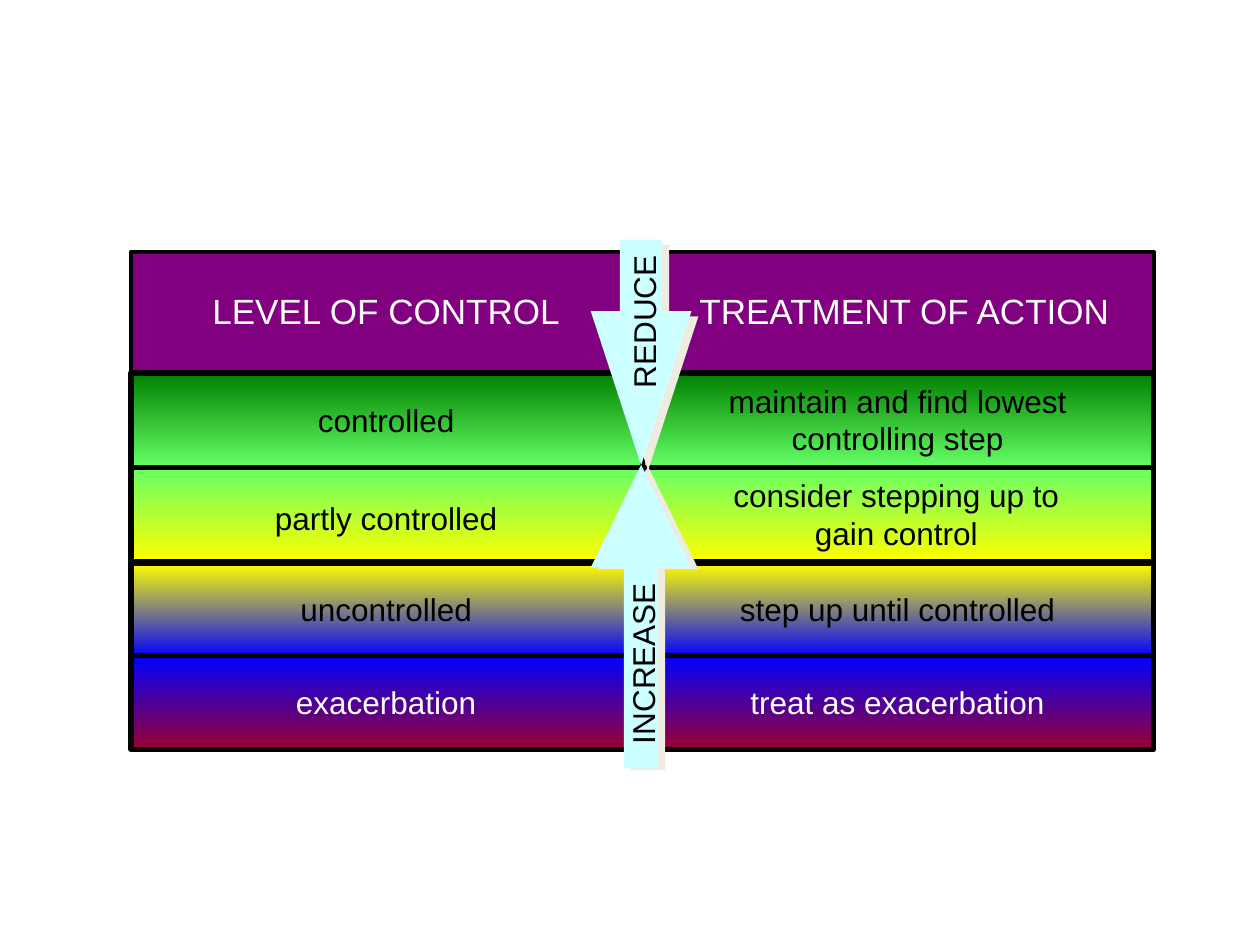
"""Build the slide pairing each level of control with its treatment action."""
from lxml import etree
from pptx import Presentation
from pptx import util as u
from pptx.dml.color import RGBColor
from pptx.enum import shapes, text
from pptx.oxml.ns import qn

COLORS = {
    "black": "000000", "white": "FFFFFF", "purple": "800080",
    "green": "008000", "lime": "66FF66", "yellow": "FFFF00",
    "blue": "0000FF", "crimson": "990033", "ice": "CCFFFF", "shade": "EEECE1",
}


def rgb(name):
    return RGBColor.from_string(COLORS[name])


def add_text(group, words, box, size=18, color="black",
             align=text.PP_ALIGN.CENTER, wrap=True, rotation=0):
    sp = group.shapes.add_textbox(*map(u.Cm, box))
    sp.rotation = rotation
    tf = sp.text_frame
    tf.word_wrap = wrap
    tf.auto_size = text.MSO_AUTO_SIZE.SHAPE_TO_FIT_TEXT
    p = tf.paragraphs[0]
    p.alignment = align
    r = p.add_run()
    r.text = words
    r.font.name = "Arial"
    r.font.size = u.Pt(size)
    r.font.color.rgb = rgb(color)


prs = Presentation()
prs.slide_width, prs.slide_height = u.Cm(25.4), u.Cm(19.05)
s = prs.slides.add_slide(prs.slide_layouts[6])

COL_W = 10.31
ROWS = [
    (5.08, 2.44, ["purple"], 2.25),
    (7.52, 1.9, ["green", "lime"], 3),
    (9.42, 1.9, ["lime", "yellow"], 3),
    (11.35, 1.9, ["yellow", "blue"], 3),
    (13.21, 1.9, ["blue", "crimson"], 3),
]
COLUMNS = [
    (2.64, [
        ("LEVEL OF CONTROL", (2.64, 5.72, 10.29, 1.09), 20, "white"),
        ("controlled", (2.64, 7.95, 10.29, 1.02), 18, "black"),
        ("partly controlled", (2.64, 9.93, 10.29, 1.02), 18, "black"),
        ("uncontrolled", (2.64, 11.76, 10.29, 1.02), 18, "black"),
        ("exacerbation", (2.64, 13.64, 10.29, 1.02), 18, "white"),
    ]),
    (12.95, [
        ("TREATMENT OF ACTION", (13, 5.72, 10.46, 1.09), 20, "white"),
        ("maintain and find lowest controlling step",
         (12.95, 7.57, 10.29, 1.78), 18, "black"),
        ("consider stepping up to gain control",
         (14.12, 9.47, 7.9, 1.78), 18, "black"),
        ("step up until controlled", (12.95, 11.76, 10.29, 1.02), 18, "black"),
        ("treat as exacerbation", (12.95, 13.64, 10.29, 1.02), 18, "white"),
    ]),
]
for left, labels in COLUMNS:
    group = s.shapes.add_group_shape()
    for top, height, fills, line_width in ROWS:
        sp = group.shapes.add_shape(
            shapes.MSO_SHAPE.RECTANGLE,
            *map(u.Cm, (left, top, COL_W, height)))
        sp.shadow.inherit = False
        sp.line.color.rgb = rgb("black")
        sp.line.width = u.Pt(line_width)
        if len(fills) == 1:
            sp.fill.solid()
            sp.fill.fore_color.rgb = rgb(fills[0])
        else:
            sp.fill.gradient()
            sp.fill.gradient_angle = 270
            for stop, name in zip(sp.fill.gradient_stops, fills):
                stop.color.rgb = rgb(name)
    for words, box, size, color in labels:
        add_text(group, words, box, size=size, color=color)

ARROWS = [
    (shapes.MSO_SHAPE.DOWN_ARROW, (11.91, 4.83, 2.03, 4.55), (0.42, 1.53),
     (5, 37), "REDUCE", (11.38, 5.97, 3.2, 1.02)),
    (shapes.MSO_SHAPE.UP_ARROW, (11.91, 9.37, 2.03, 6.12), (0.34, 1.02),
     (4.1, 14), "INCREASE", (11.07, 12.85, 3.78, 1.02)),
]
for kind, place, adjust, (distance, angle), words, box in ARROWS:
    group = s.shapes.add_group_shape()
    sp = group.shapes.add_shape(kind, *map(u.Cm, place))
    sp.adjustments[0], sp.adjustments[1] = adjust
    sp.fill.solid()
    sp.fill.fore_color.rgb = rgb("ice")
    sp.line.fill.background()
    sp.shadow.inherit = False
    effects = sp._element.spPr.find(qn("a:effectLst"))
    shadow = etree.SubElement(
        effects, qn("a:outerShdw"), dist=str(u.Pt(distance)),
        dir=str(angle * 60000), algn="ctr", rotWithShape="0")
    etree.SubElement(shadow, qn("a:srgbClr"), val=COLORS["shade"])
    add_text(group, words, box, align=text.PP_ALIGN.LEFT, wrap=False,
             rotation=270)

prs.save("out.pptx")
